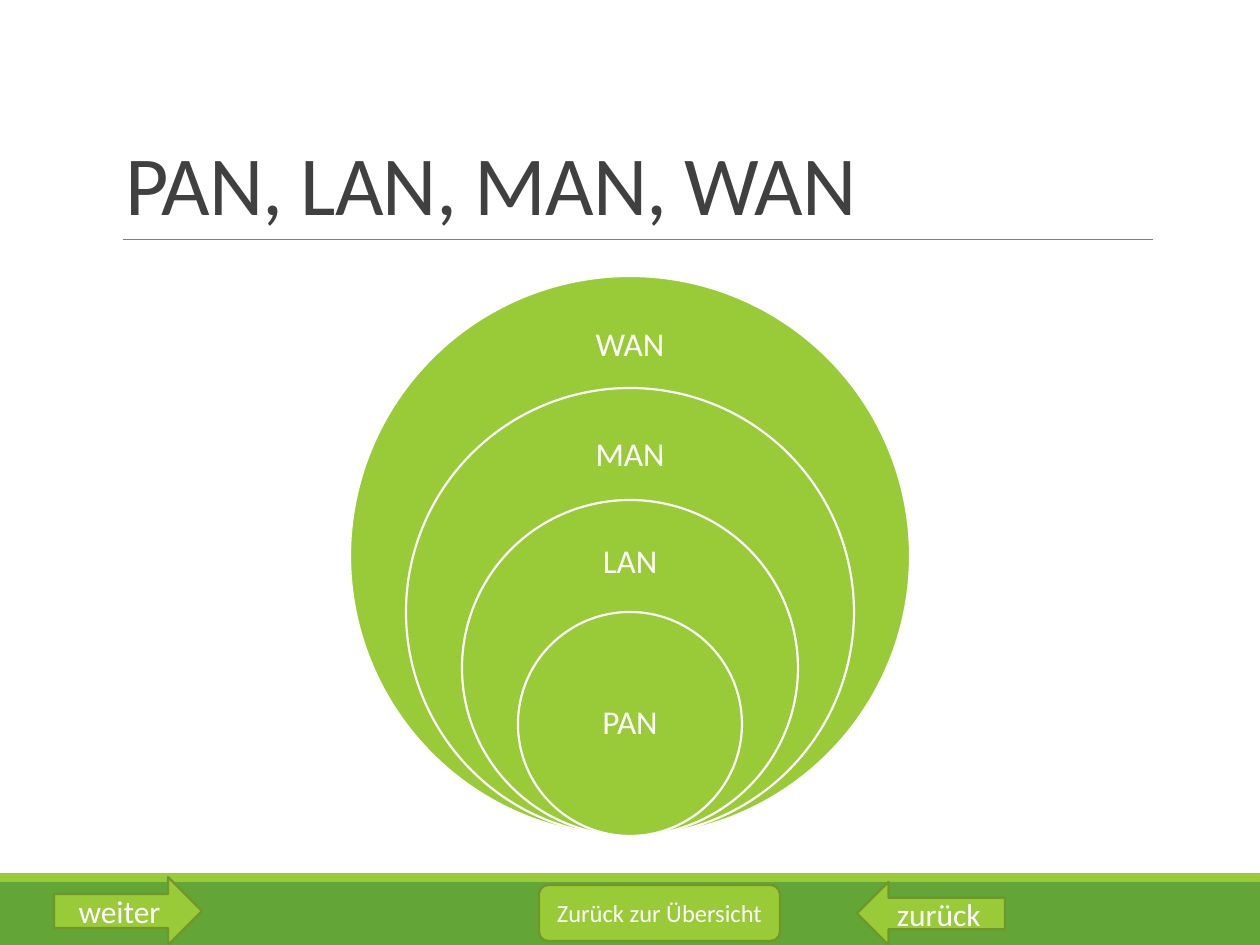
from pptx import Presentation
from pptx.dml.color import RGBColor
from pptx.enum.shapes import MSO_CONNECTOR, MSO_SHAPE as Shape
from pptx.enum.text import MSO_ANCHOR as Anchor, PP_ALIGN as Align
from pptx.oxml.ns import qn
from pptx.util import Emu, Pt
from lxml import etree

PX = 914400 / 126
SLIDE_SIZE = (1260, 945)
LIME, GREEN, OLIVE = "99CB38", "63A537", "719629"
WHITE, GREY, DARK = "FFFFFF", "808080", "404040"

TITLE = "PAN, LAN, MAN, WAN"
TITLE_BOX = (113, 39, 1040, 200)
RULE = (123, 239, 1153, 239)
FOOTER_BANDS = [((0, 882, 1260, 63), GREEN), ((0, 873, 1260, 9), LIME)]

# Network, label top, label height; outermost first
NETWORKS = [("WAN", 304, 84), ("MAN", 415, 81), ("LAN", 525, 76), ("PAN", 668, 112)]
CENTRE_X, RINGS_BOTTOM = 630, 836
INNER_DIAMETER, RING_STEP = 224, 112
LABEL_WIDTH, LABEL_INSET = 156, 19

BUTTONS = [
    ("zurück", Shape.LEFT_ARROW, (857, 882, 148, 63), 18),
    ("Zurück zur Übersicht", Shape.ROUNDED_RECTANGLE, (539, 885, 241, 56), 14),
    ("weiter", Shape.RIGHT_ARROW, (54, 877, 148, 68), 18),
]


def scaled(lengths):
    return [Emu(round(length * PX)) for length in lengths]


def colour(hex_string):
    return RGBColor.from_string(hex_string)


def write(frame, text, size, ink=WHITE, align=Align.CENTER, line_spacing=None, **frame_format):
    """Put one formatted line into a text frame; frame_format overrides frame attributes."""
    for name, value in {"word_wrap": True, "vertical_anchor": Anchor.MIDDLE, **frame_format}.items():
        setattr(frame, name, value)
    paragraph = frame.paragraphs[0]
    paragraph.alignment = align
    paragraph.line_spacing = line_spacing
    run = paragraph.add_run()
    run.text = text
    for name, value in {"name": "Calibri", "size": Pt(size)}.items():
        setattr(run.font, name, value)
    run.font.color.rgb = colour(ink)
    return run


def add_filled(slide, kind, box, fill, outline=None):
    shape = slide.shapes.add_shape(kind, *scaled(box))
    shape.shadow.inherit = False
    shape.fill.solid()
    shape.fill.fore_color.rgb = colour(fill)
    if outline:
        shape.line.color.rgb = colour(outline)
        shape.line.width = Pt(1.25)
    else:
        shape.line.fill.background()
    return shape


def add_title(slide):
    rule = slide.shapes.add_connector(MSO_CONNECTOR.STRAIGHT, *scaled(RULE))
    rule.line.color.rgb = colour(GREY)
    rule.line.width = Pt(0.5)
    etree.SubElement(rule._element.spPr, qn("a:effectLst"))
    title = slide.shapes.add_textbox(*scaled(TITLE_BOX))
    run = write(title.text_frame, TITLE, 48, DARK, Align.LEFT, 0.85,
                vertical_anchor=Anchor.BOTTOM)
    run._r.get_or_add_rPr().set("spc", "-50")


def add_rings(slide):
    """Stack circles that shrink by one step and touch at the bottom."""
    inset = scaled([LABEL_INSET])[0]
    insets = {f"margin_{side}": inset for side in ("left", "top", "right", "bottom")}
    for depth, (network, label_top, label_height) in enumerate(NETWORKS):
        diameter = INNER_DIAMETER + RING_STEP * (len(NETWORKS) - 1 - depth)
        ring = (CENTRE_X - diameter / 2, RINGS_BOTTOM - diameter, diameter, diameter)
        add_filled(slide, Shape.OVAL, ring, LIME, WHITE)
        label_box = (CENTRE_X - LABEL_WIDTH / 2, label_top, LABEL_WIDTH, label_height)
        label = slide.shapes.add_textbox(*scaled(label_box))
        write(label.text_frame, network, 19, line_spacing=0.9, **insets)


def main():
    deck = Presentation()
    deck.slide_width, deck.slide_height = scaled(SLIDE_SIZE)
    slide = deck.slides.add_slide(deck.slide_layouts[6])
    for box, fill in FOOTER_BANDS:
        add_filled(slide, Shape.RECTANGLE, box, fill)
    add_title(slide)
    add_rings(slide)
    for caption, kind, box, size in BUTTONS:
        button = add_filled(slide, kind, box, LIME, OLIVE)
        write(button.text_frame, caption, size)
    deck.save("out.pptx")


if __name__ == "__main__":
    main()
